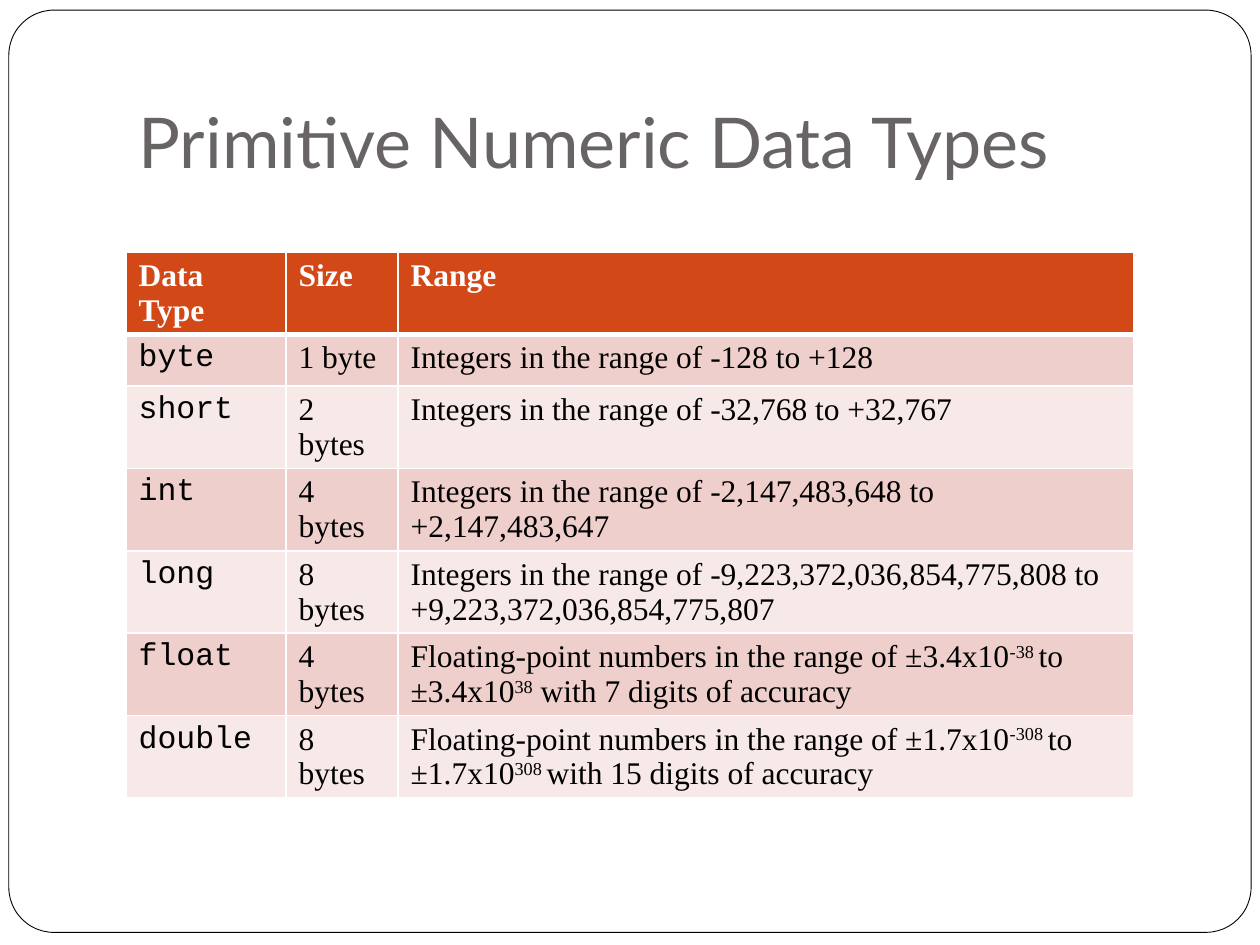
from lxml.etree import SubElement
from pptx import Presentation
from pptx.dml.color import RGBColor
from pptx.enum.shapes import MSO_SHAPE
from pptx.enum.text import MSO_ANCHOR, MSO_AUTO_SIZE, PP_ALIGN
from pptx.oxml.ns import qn
from pptx.util import Inches, Pt

WHITE = RGBColor(0xFF, 0xFF, 0xFF)
BLACK = RGBColor(0x00, 0x00, 0x00)
GRAY = RGBColor(0x69, 0x64, 0x64)
ORANGE = RGBColor(0xD3, 0x48, 0x17)
ROSE = RGBColor(0xEF, 0xCF, 0xCC)
PALE_ROSE = RGBColor(0xF7, 0xE9, 0xE8)

SERIF = "Times New Roman"
MONOSPACE = "Courier New"
SUPERSCRIPT_MARK = "^"
COLUMN_SHARES = (1.27 / 8, 0.89 / 8, 5.84 / 8)
ROW_HEIGHT = Inches(0.41)
ROWS = (
    ("Data Type", "Size", "Range"),
    ("byte", "1 byte", "Integers in the range of -128 to +128"),
    ("short", "2 bytes", "Integers in the range of -32,768 to +32,767"),
    ("int", "4 bytes", "Integers in the range of -2,147,483,648 to +2,147,483,647"),
    ("long", "8 bytes", "Integers in the range of -9,223,372,036,854,775,808 to +9,223,372,036,854,775,807"),
    ("float", "4 bytes", "Floating-point numbers in the range of ±3.4x10^-38 ^to ±3.4x10^38^ with 7 digits of accuracy"),
    ("double", "8 bytes", "Floating-point numbers in the range of ±1.7x10^-308 ^to ±1.7x10^308 ^with 15 digits of accuracy"),
)


def add_run(paragraph, text, font_name, size, color, bold=False):
    """Append a formatted run and return it."""
    run = paragraph.add_run()
    run.text = text
    run.font.name = font_name
    run.font.size = Pt(size)
    run.font.bold = bold
    run.font.color.rgb = color
    return run


def add_frame(slide, left, top, width, height):
    """Draw the rounded outline around the slide."""
    frame = slide.shapes.add_shape(MSO_SHAPE.ROUNDED_RECTANGLE, left, top, width, height)
    frame.adjustments[0] = 0.049
    frame.shadow.inherit = False
    frame.fill.solid()
    frame.fill.fore_color.rgb = WHITE
    frame.line.color.rgb = BLACK
    frame.line.width = Pt(0.5)
    tree = slide.shapes.title.element.getparent()
    tree.insert(2, frame.element)


def fill_title(slide, left, top, width, height):
    """Place and format the title placeholder."""
    title = slide.shapes.title
    title.left, title.top, title.width, title.height = left, top, width, height
    text_frame = title.text_frame
    text_frame.auto_size = MSO_AUTO_SIZE.NONE
    text_frame.vertical_anchor = MSO_ANCHOR.BOTTOM
    text_frame.margin_bottom = Inches(0.1)
    paragraph = text_frame.paragraphs[0]
    paragraph.alignment = PP_ALIGN.LEFT
    add_run(paragraph, "Primitive Numeric Data Types", "Lato", 40, GRAY)


def set_borders(cell, top, bottom):
    """Give a cell white borders with the given top and bottom widths in points."""
    properties = cell._tc.get_or_add_tcPr()
    for tag, width in (("a:lnL", 1), ("a:lnR", 1), ("a:lnT", top), ("a:lnB", bottom)):
        line = SubElement(properties, qn(tag), w=str(Pt(width)))
        fill = SubElement(line, qn("a:solidFill"))
        SubElement(fill, qn("a:srgbClr"), val=str(WHITE))


def fill_cell(cell, text, row, column):
    """Write and style one table cell according to its row and column."""
    is_header = row == 0
    set_borders(cell, top=3 if row == 1 else 1, bottom=3 if is_header else 1)
    cell.fill.solid()
    cell.fill.fore_color.rgb = ORANGE if is_header else (PALE_ROSE, ROSE)[row % 2]
    font_name = MONOSPACE if column == 0 and not is_header else SERIF
    color = WHITE if is_header else BLACK
    paragraph = cell.text_frame.paragraphs[0]
    for index, part in enumerate(text.split(SUPERSCRIPT_MARK)):
        run = add_run(paragraph, part, font_name, 18, color, is_header)
        if index % 2:
            run._r.get_or_add_rPr().set("baseline", "30000")


def add_type_table(slide, left, top, width):
    """Build the table of numeric types."""
    height = ROW_HEIGHT * len(ROWS)
    table = slide.shapes.add_table(len(ROWS), len(COLUMN_SHARES), left, top, width, height).table
    for column, share in zip(table.columns, COLUMN_SHARES):
        column.width = int(width * share)
    for row, texts in enumerate(ROWS):
        for column, text in enumerate(texts):
            fill_cell(table.cell(row, column), text, row, column)


def main():
    """Build and save the presentation."""
    presentation = Presentation()
    presentation.slide_width = Inches(10)
    presentation.slide_height = Inches(7.5)
    slide = presentation.slides.add_slide(presentation.slide_layouts[5])
    add_frame(slide, Inches(0.07), Inches(0.08), Inches(9.86), Inches(7.32))
    fill_title(slide, Inches(1), Inches(0.3), Inches(8.5), Inches(1.25))
    add_type_table(slide, Inches(1), Inches(2), Inches(8))
    presentation.save("out.pptx")


if __name__ == "__main__":
    main()
